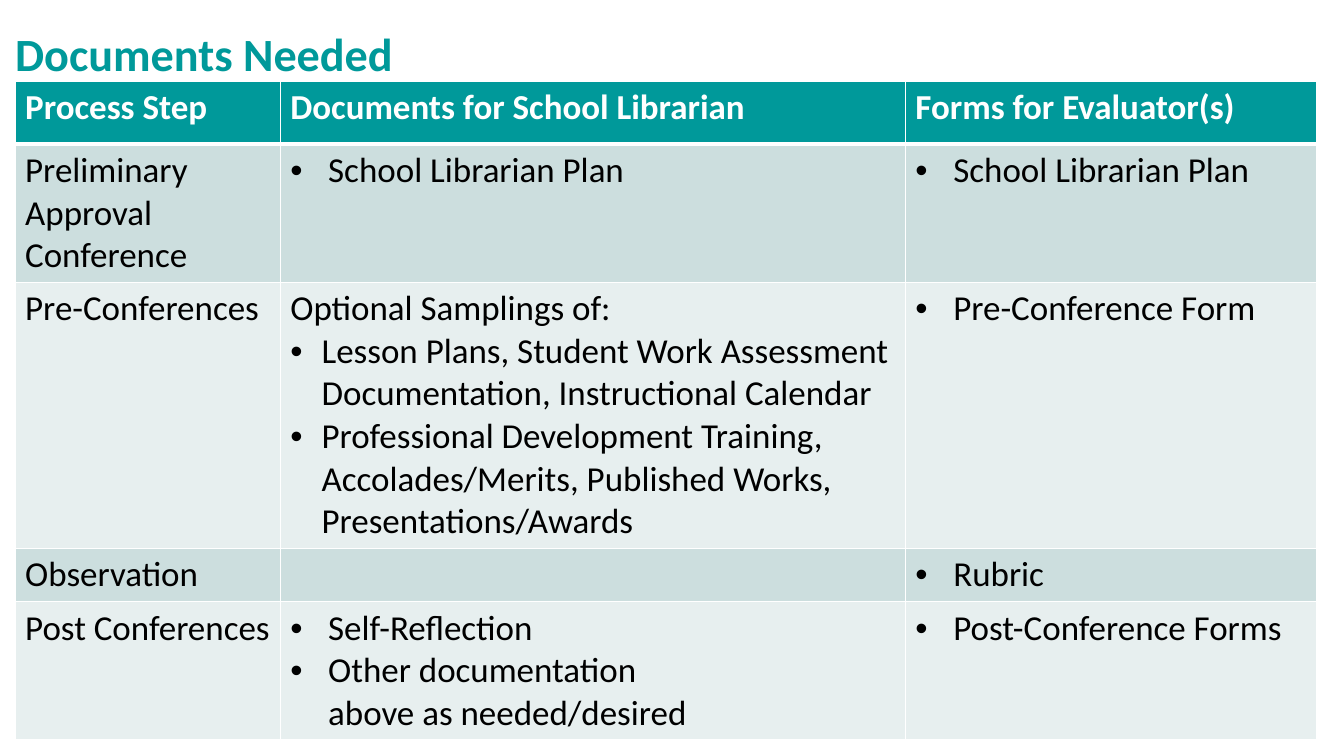
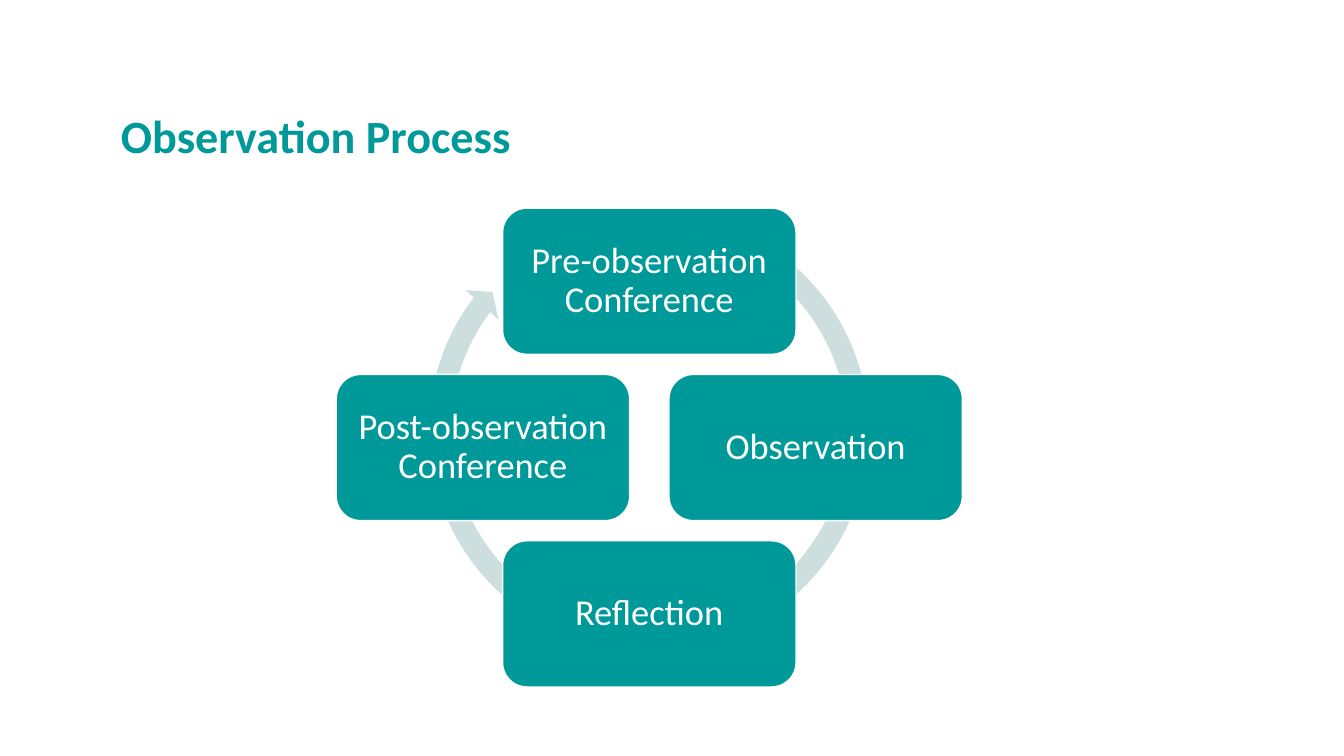
from lxml.etree import SubElement
from pptx import Presentation
from pptx.dml.color import RGBColor
from pptx.enum.shapes import MSO_SHAPE
from pptx.enum.text import MSO_ANCHOR, MSO_AUTO_SIZE, PP_ALIGN
from pptx.oxml.ns import qn
from pptx.util import Inches, Pt

HUES = {"teal": "00999A", "mist": "CCDEDE", "pale": "E7EFEF",
        "white": "FFFFFF", "black": "000000"}
FACE = "Calibri"
HEAD = {"size": Pt(33), "bold": True}
CELL = {"size": Pt(25), "bold": False}
TOP = {"size": Pt(25), "bold": True}
STEP = {"size": Pt(26), "bold": False}
COLS = [2.63, 6.2, 4.08]
ROWS = [0.62, 1.37, 2.64, 0.53, 1.36]
WIDE, NEAR = 0.375, 0.31
HARD = chr(160)

GRID = [
    [[("Process Step", 0)], [("Documents for School Librarian", 0)],
     [("Forms for Evaluator(s)", 0)]],
    [[("Preliminary Approval Conference", 0)],
     [("School Librarian Plan", WIDE)], [("School Librarian Plan", WIDE)]],
    [[("Pre-Conferences", 0)],
     [("Optional~Samplings of:", 0),
      ("Lesson Plans, Student Work Assessment Documentation, "
       "Instructional Calendar", NEAR),
      ("Professional Development Training, Accolades/Merits, "
       "Published Works, Presentations/Awards", NEAR)],
     [("Pre-Conference Form", WIDE)]],
    [[("Observation", 0)], [], [("Rubric", WIDE)]],
    [[("Post~Conferences", 0)],
     [("Self-Reflection~", WIDE),
      ("Other documentation above~as~needed/desired", WIDE)],
     [("Post-Conference Forms", WIDE)]],
]
RING = [("Pre-observation Conference", 0, -1), ("Observation", 1, 0),
        ("Reflection", 0, 1), ("Post-observation Conference", -1, 0)]


def tint(name):
    return RGBColor.from_string(HUES[name])


def put(item, form):
    for key, val in form.items():
        setattr(item, key, val)


def paint(item, name):
    item.fill.solid()
    item.fill.fore_color.rgb = tint(name)


def write(para, text, form, hue):
    run = para.add_run()
    run.text = text.replace("~", HARD)
    put(run.font, {"name": FACE, **form})
    run.font.color.rgb = tint(hue)


def dot(para, gap):
    props = para._p.get_or_add_pPr()
    props.set("marL", str(Inches(gap)))
    props.set("indent", str(-Inches(gap)))
    SubElement(props, qn("a:buFont"), typeface="Arial")
    SubElement(props, qn("a:buChar"), char="•")


def edge(cell, wide):
    props = cell._tc.get_or_add_tcPr()
    for side in "LRTB":
        line = SubElement(props, qn("a:ln" + side),
                          w=str(Pt(wide.get(side, 1))))
        fill = SubElement(line, qn("a:solidFill"))
        SubElement(fill, qn("a:srgbClr"), val=HUES["white"])


def start(deck, text, left, top, width, height):
    slide = deck.slides.add_slide(deck.slide_layouts[5])
    title = slide.shapes.title
    put(title, {"left": Inches(left), "top": Inches(top),
                "width": Inches(width), "height": Inches(height)})
    frame = title.text_frame
    put(frame, {"margin_left": 0, "margin_right": 0, "margin_top": 0,
                "margin_bottom": 0, "word_wrap": True,
                "auto_size": MSO_AUTO_SIZE.NONE,
                "vertical_anchor": MSO_ANCHOR.BOTTOM})
    para = frame.paragraphs[0]
    put(para, {"alignment": PP_ALIGN.LEFT, "line_spacing": 0.85})
    write(para, text, HEAD, "teal")
    return slide


def fill_cell(cell, lines, row):
    edge(cell, {0: {"B": 3}, 1: {"T": 3}}.get(row, {}))
    paint(cell, "teal" if row == 0 else "mist" if row % 2 else "pale")
    frame = cell.text_frame
    for num, (text, gap) in enumerate(lines):
        para = frame.add_paragraph() if num else frame.paragraphs[0]
        if gap:
            dot(para, gap)
        write(para, text, CELL if row else TOP, "black" if row else "white")


def add_grid(slide, left, top):
    table = slide.shapes.add_table(
        len(ROWS), len(COLS), Inches(left), Inches(top),
        Inches(sum(COLS)), Inches(sum(ROWS))).table
    put(table, {"first_row": False, "horz_banding": False})
    for col, width in zip(table.columns, COLS):
        col.width = Inches(width)
    for num, height in enumerate(ROWS):
        table.rows[num].height = Inches(height)
        for col, lines in enumerate(GRID[num]):
            fill_cell(table.cell(num, col), lines, num)


def add_form(slide, kind, hue, left, top, width, height):
    shape = slide.shapes.add_shape(kind, Inches(left), Inches(top),
                                   Inches(width), Inches(height))
    shape.shadow.inherit = False
    paint(shape, hue)
    return shape


def add_step(slide, text, left, top, width, height):
    box = add_form(slide, MSO_SHAPE.ROUNDED_RECTANGLE, "teal",
                   left, top, width, height)
    box.line.color.rgb = tint("white")
    box.line.width = Pt(1)
    frame = box.text_frame
    pad = Inches(0.1)
    put(frame, {"margin_left": pad, "margin_right": pad, "margin_top": pad,
                "margin_bottom": pad, "word_wrap": True,
                "vertical_anchor": MSO_ANCHOR.MIDDLE})
    para = frame.paragraphs[0]
    put(para, {"alignment": PP_ALIGN.CENTER, "line_spacing": 0.9})
    write(para, text, STEP, "white")


def add_ring(slide, mid_x, mid_y, reach, width, height):
    arc = add_form(slide, MSO_SHAPE.CIRCULAR_ARROW, "mist",
                   4.14, 1.98, 4.59, 4.59)
    arc.line.fill.background()
    for num, val in enumerate([0.047, 2.729, 130.24, 179.01, 0.048]):
        arc.adjustments[num] = val
    for text, across, down in RING:
        add_step(slide, text, mid_x + across * reach - width / 2,
                 mid_y + down * reach - height / 2, width, height)


def main():
    deck = Presentation()
    put(deck, {"slide_width": Inches(13.33), "slide_height": Inches(7.5)})
    needs = start(deck, "Documents Needed", 0.15, 0.19, 8.2, 0.61)
    add_grid(needs, 0.15, 0.81)
    cycle = start(deck, "Observation Process", 1.2, 0.22, 10.94, 1.4)
    add_ring(cycle, 6.44, 4.44, 1.65, 2.91, 1.45)
    deck.save("out.pptx")


if __name__ == "__main__":
    main()
